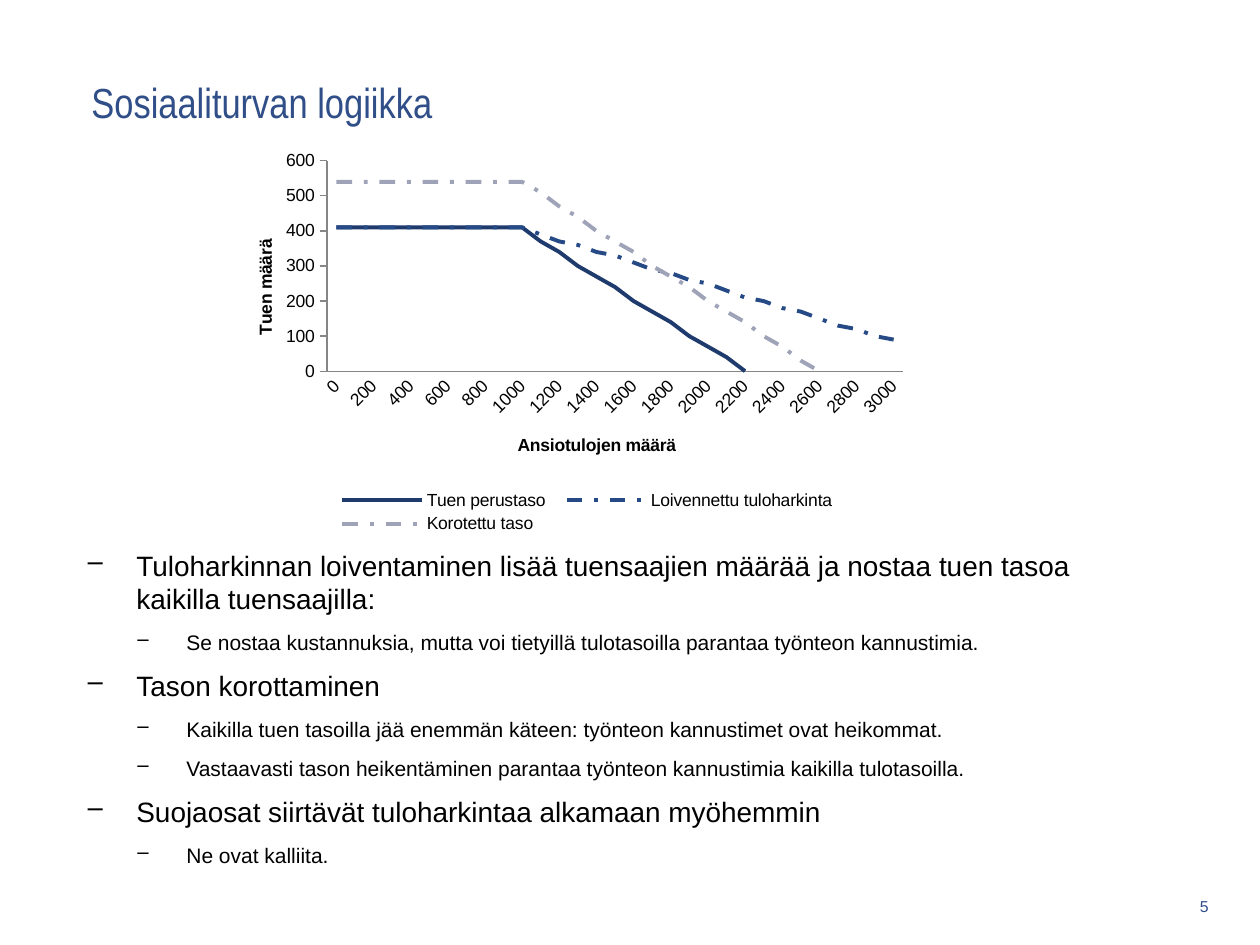
import pptx
import pptx.chart.data
import pptx.dml.color
import pptx.enum.chart
import pptx.enum.dml
import pptx.enum.text
import pptx.oxml
import pptx.oxml.ns
import pptx.util

PX = 914400 // 126
BLUE = "304E88"
BLACK = "000000"
DASH_DOT = pptx.enum.dml.MSO_LINE.DASH_DOT

SERIES = [
    ("Tuen perustaso", "1F3B6E", None,
     [410] * 11 + [370, 340, 300, 270, 240, 200, 170, 140, 100, 70, 40, 0] + [None] * 8),
    ("Loivennettu tuloharkinta", "264A85", DASH_DOT,
     [410] * 11 + [390, 370, 360, 340, 330, 310, 290, 280, 260, 250,
                   230, 210, 200, 180, 170, 150, 130, 120, 100, 90]),
    ("Korotettu taso", "9FA3B8", DASH_DOT,
     [540] * 11 + [510, 470, 440, 400, 370, 340, 300, 270, 240, 200,
                   170, 140, 100, 70, 30, 0] + [None] * 4),
]

BULLETS = [
    (0, "Tuloharkinnan loiventaminen lisää tuensaajien määrää ja nostaa tuen tasoa "
        "kaikilla tuensaajilla:"),
    (1, "Se nostaa kustannuksia, mutta voi tietyillä tulotasoilla parantaa työnteon kannustimia."),
    (0, "Tason korottaminen"),
    (1, "Kaikilla tuen tasoilla jää enemmän käteen: työnteon kannustimet ovat heikommat."),
    (1, "Vastaavasti tason heikentäminen parantaa työnteon kannustimia kaikilla tulotasoilla."),
    (0, "Suojaosat siirtävät tuloharkintaa alkamaan myöhemmin"),
    (1, "Ne ovat kalliita."),
]


def px(length):
    return pptx.util.Emu(length * PX)


def rgb(color):
    return pptx.dml.color.RGBColor.from_string(color)


def write(paragraph, text, size=10, color=BLACK, font="Arial", bold=False, align=None):
    run = paragraph.add_run()
    run.text = text
    run.font.size = pptx.util.Pt(size)
    run.font.name = font
    run.font.bold = bold
    run.font.color.rgb = rgb(color)
    if align is not None:
        paragraph.alignment = align


def add_dash(paragraph, level):
    """Hang the paragraph behind a dash bullet at its level's indent."""
    properties = paragraph._p.get_or_add_pPr()
    properties.set("marL", str(px(50 * (level + 1))))
    properties.set("indent", str(px(-50)))
    properties.append(pptx.oxml.parse_xml(
        f'<a:buChar {pptx.oxml.ns.nsdecls("a")} char="‒"/>'))


def place(element, index, **fractions):
    """Give a chart part a fixed place, in fractions of the chart."""
    for layout in element.findall(pptx.oxml.ns.qn("c:layout")):
        element.remove(layout)
    target = '<c:layoutTarget val="inner"/>' if index == 0 else ""
    modes = '<c:xMode val="edge"/><c:yMode val="edge"/>'
    values = "".join(f'<c:{key} val="{value}"/>' for key, value in fractions.items())
    element.insert(index, pptx.oxml.parse_xml(
        f'<c:layout {pptx.oxml.ns.nsdecls("c")}><c:manualLayout>'
        f'{target}{modes}{values}</c:manualLayout></c:layout>'))


class SlideBuilder:
    """Holds the current slide and the style of its elements."""

    line_width = pptx.util.Pt(2.25)
    axis_color = "868686"

    def __init__(self, slide):
        self.slide = slide

    def text_box(self, left, top, width, height, anchor=pptx.enum.text.MSO_ANCHOR.MIDDLE):
        shape = self.slide.shapes.add_textbox(px(left), px(top), px(width), px(height))
        frame = shape.text_frame
        frame.word_wrap = True
        frame.vertical_anchor = anchor
        return frame

    def label(self, text, *box, **style):
        write(self.text_box(*box).paragraphs[0], text, **style)

    def bullets(self, items, *box):
        frame = self.text_box(*box, anchor=pptx.enum.text.MSO_ANCHOR.TOP)
        for number, (level, text) in enumerate(items):
            paragraph = frame.add_paragraph() if number else frame.paragraphs[0]
            paragraph.level = level
            paragraph.space_after = pptx.util.Pt(8)
            add_dash(paragraph, level)
            write(paragraph, text, size=12 if level else 16)

    def style_axis(self, axis, title, tick, **position):
        axis.has_major_gridlines = False
        axis.major_tick_mark = tick
        axis.minor_tick_mark = pptx.enum.chart.XL_TICK_MARK.NONE
        axis.format.line.color.rgb = rgb(self.axis_color)
        write(axis.axis_title.text_frame.paragraphs[0], title, bold=True)
        place(axis.axis_title._element, 1, **position)

    def line_chart(self, categories, series, *box):
        data = pptx.chart.data.CategoryChartData()
        data.categories = categories
        for name, _, _, values in series:
            data.add_series(name, values)
        chart = self.slide.shapes.add_chart(
            pptx.enum.chart.XL_CHART_TYPE.LINE, *map(px, box), data).chart
        chart.has_title = False
        chart.font.size = pptx.util.Pt(10)
        chart.font.name = "Arial"
        chart.font.color.rgb = rgb(BLACK)
        chart.plots[0].vary_by_categories = False
        for line, (_, color, dash, _) in zip(chart.plots[0].series, series):
            line.smooth = False
            line.marker.style = pptx.enum.chart.XL_MARKER_STYLE.NONE
            line.format.line.width = self.line_width
            line.format.line.color.rgb = rgb(color)
            if dash:
                line.format.line.dash_style = dash
        chart.has_legend = True
        chart.legend.position = pptx.enum.chart.XL_LEGEND_POSITION.BOTTOM
        chart.legend.include_in_layout = False
        place(chart.legend._element, 1, x=0.15, y=0.86, w=0.75, h=0.13)
        plot_area = chart._chartSpace.find(".//" + pptx.oxml.ns.qn("c:plotArea"))
        place(plot_area, 0, x=0.15, y=0.04, w=0.83, h=0.53)
        return chart


def main():
    presentation = pptx.Presentation()
    presentation.slide_width = pptx.util.Inches(10)
    presentation.slide_height = pptx.util.Inches(7.5)
    builder = SlideBuilder(presentation.slides.add_slide(presentation.slide_layouts[6]))

    builder.label("Sosiaaliturvan logiikka", 79, 20, 1007, 164,
                  size=24, font="Arial Narrow", color=BLUE)
    builder.bullets(BULLETS, 74, 542, 1027, 318)
    builder.label("5", 1155, 886, 66, 40, size=9, color=BLUE,
                  align=pptx.enum.text.PP_ALIGN.RIGHT)

    incomes = [str(income) for income in range(0, 3001, 100)]
    chart = builder.line_chart(incomes, SERIES, 223, 145, 694, 397)
    ticks = pptx.enum.chart.XL_TICK_MARK
    builder.style_axis(chart.category_axis, "Ansiotulojen määrä", ticks.NONE, x=0.42, y=0.72)
    builder.style_axis(chart.value_axis, "Tuen määrä", ticks.OUTSIDE, x=0.04, y=0.23)
    chart.value_axis.minimum_scale = 0
    chart.value_axis.maximum_scale = 600
    chart.value_axis.major_unit = 100

    category_axis = chart.category_axis._element
    chart.category_axis.tick_labels.font.size = pptx.util.Pt(10)
    body = category_axis.find(pptx.oxml.ns.qn("c:txPr")).find(pptx.oxml.ns.qn("a:bodyPr"))
    body.set("rot", str(-45 * 60000))
    category_axis.find(pptx.oxml.ns.qn("c:noMultiLvlLbl")).addprevious(pptx.oxml.parse_xml(
        f'<c:tickLblSkip {pptx.oxml.ns.nsdecls("c")} val="2"/>'))

    presentation.save("out.pptx")


if __name__ == "__main__":
    main()
